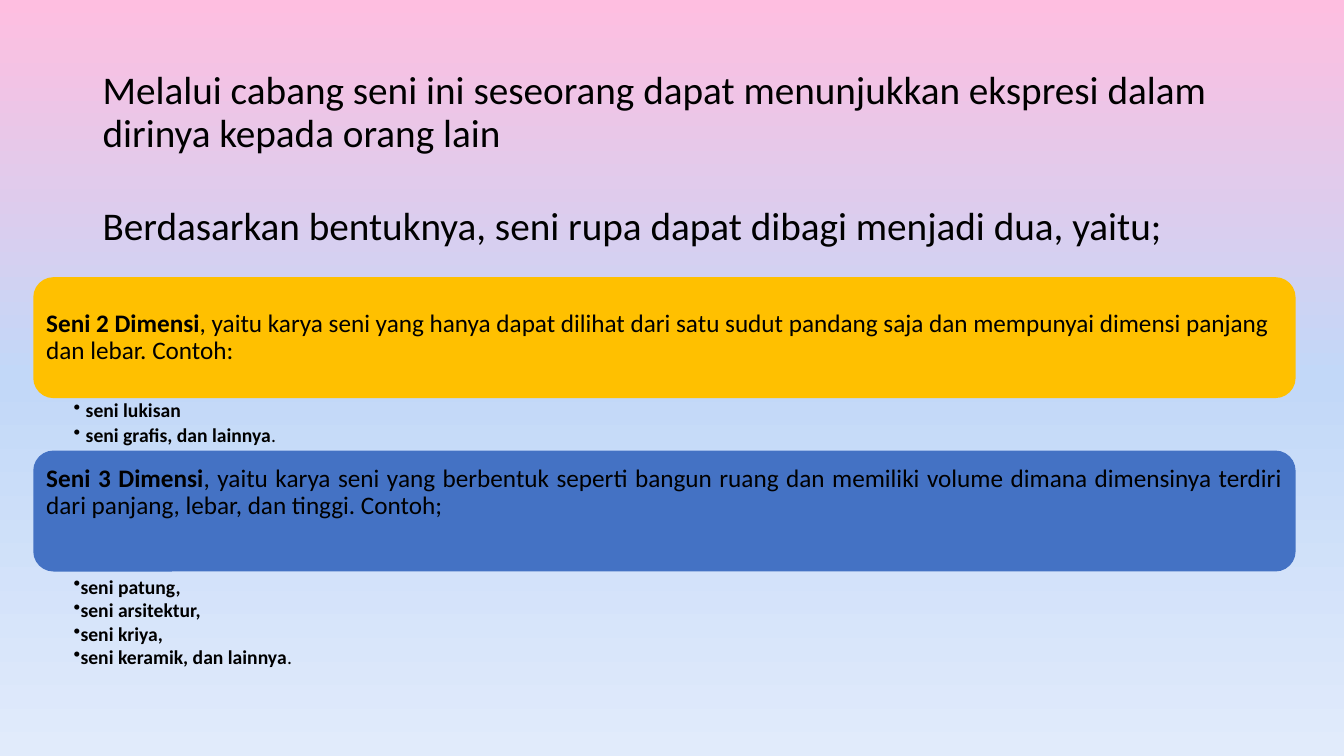
from copy import deepcopy

from lxml import etree
from pptx import Presentation
from pptx.dml.color import RGBColor
from pptx.enum.shapes import MSO_SHAPE
from pptx.enum.text import MSO_ANCHOR, PP_ALIGN
from pptx.oxml.ns import qn
from pptx.util import Inches, Pt

ROUNDED = MSO_SHAPE.ROUNDED_RECTANGLE
TOP, MIDDLE = MSO_ANCHOR.TOP, MSO_ANCHOR.MIDDLE
LEFT, JUSTIFY = PP_ALIGN.LEFT, PP_ALIGN.JUSTIFY


def color(value):
    return RGBColor.from_string(value)


class SlideBuilder:
    font = "Calibri"
    ink = "000000"

    def __init__(self, page):
        self.page = page

    def background(self, colors):
        """Vertical gradient with evenly spaced stops."""
        fill = self.page.background.fill
        fill.gradient()
        fill.gradient_angle = 270
        stop_list = self.page._element.find(".//" + qn("a:gsLst"))
        while len(stop_list) < len(colors):
            stop_list.append(deepcopy(stop_list[-1]))
        for index, (stop, value) in enumerate(zip(fill.gradient_stops, colors)):
            stop.position = index / (len(colors) - 1)
            stop.color.rgb = color(value)

    def fill_text(self, shape, paragraphs, size, margins, anchor=TOP, **para_format):
        """Each paragraph is a list of (text, bold) spans."""
        frame = shape.text_frame
        frame.word_wrap = True
        frame.vertical_anchor = anchor
        for side, margin in zip(("left", "top", "right", "bottom"), margins):
            setattr(frame, "margin_" + side, Inches(margin))
        for index, spans in enumerate(paragraphs):
            para = frame.add_paragraph() if index else frame.paragraphs[0]
            for name, value in para_format.items():
                setattr(para, name, value)
            for text, bold in spans:
                span = para.add_run()
                span.text = text
                for name, value in dict(name=self.font, size=Pt(size), bold=bold).items():
                    setattr(span.font, name, value)
                span.font.color.rgb = color(self.ink)
        return frame

    def text(self, place, paragraphs, size, margins=(0.1, 0.05, 0.1, 0.05), **formats):
        box = self.page.shapes.add_textbox(*map(Inches, place))
        return self.fill_text(box, paragraphs, size, margins, **formats)

    def bar(self, place, fill, paragraphs, margins, **formats):
        box = self.page.shapes.add_shape(ROUNDED, *map(Inches, place))
        box.shadow.inherit = False
        box.fill.solid()
        box.fill.fore_color.rgb = color(fill)
        box.line.fill.background()
        self.fill_text(box, paragraphs, 18, margins, **formats)

    def bullets(self, place, paragraphs, hanging, **formats):
        frame = self.text(place, paragraphs, 14, (0.4, 0.03, 0.14, 0.03), **formats)
        for para in frame.paragraphs:
            properties = para._p.get_or_add_pPr()
            properties.set("marL", str(Inches(hanging)))
            properties.set("indent", str(-Inches(hanging)))
            etree.SubElement(properties, qn("a:buChar")).set("char", "•")


def main():
    deck = Presentation()
    deck.slide_width, deck.slide_height = Inches(13.33), Inches(7.5)
    slide = SlideBuilder(deck.slides.add_slide(deck.slide_layouts[6]))
    slide.background(["FEBEE0", "C2D8F8", "E1EBFB"])

    # Title and introduction
    slide.text((0.92, 0.4, 11.5, 1.45), [[(
        "Melalui cabang seni ini seseorang dapat menunjukkan ekspresi dalam "
        "dirinya kepada orang lain", False)]], 28, anchor=MIDDLE, line_spacing=0.9)
    slide.text((0.92, 2, 11.5, 4.76), [[(
        "Berdasarkan bentuknya, seni rupa dapat dibagi menjadi dua, yaitu;", False)]],
        28, alignment=JUSTIFY, line_spacing=0.9)

    left, width, bar_height = 0.33, 12.52, 1.2

    # Two-dimensional art
    slide.bar((left, 2.75, width, bar_height), "FFC000", [[
        ("Seni 2 Dimensi", True),
        (", yaitu karya seni yang hanya dapat dilihat dari satu sudut pandang saja "
         "dan mempunyai dimensi panjang dan lebar. Contoh:", False)]],
        (0.07, 0.07, 0.07, 0.07), anchor=MIDDLE, alignment=LEFT, line_spacing=0.9)
    slide.bullets((left, 3.94, width, 0.53), [
        [("seni lukisan", True)],
        [("seni grafis, dan lainnya", True), (".", False)]],
        0.12, line_spacing=0.9, space_after=Pt(2.8))

    # Three-dimensional art
    slide.bar((left, 4.47, width, bar_height), "4472C4", [[
        ("Seni 3 Dimensi", True),
        (", yaitu karya seni yang berbentuk seperti bangun ruang dan memiliki volume "
         "dimana dimensinya terdiri dari panjang, lebar, dan tinggi. Contoh;", False)]],
        (0.07, 0.09, 0.07, 0.07), anchor=TOP, alignment=JUSTIFY, line_spacing=0.9)
    slide.bullets((left, 5.67, width, 1.22), [
        [("seni patung,", True)],
        [("seni arsitektur,", True)],
        [("seni kriya,", True)],
        [("seni keramik, dan lainnya", True), (".", False)]],
        0, alignment=JUSTIFY)

    deck.save("out.pptx")


if __name__ == "__main__":
    main()
